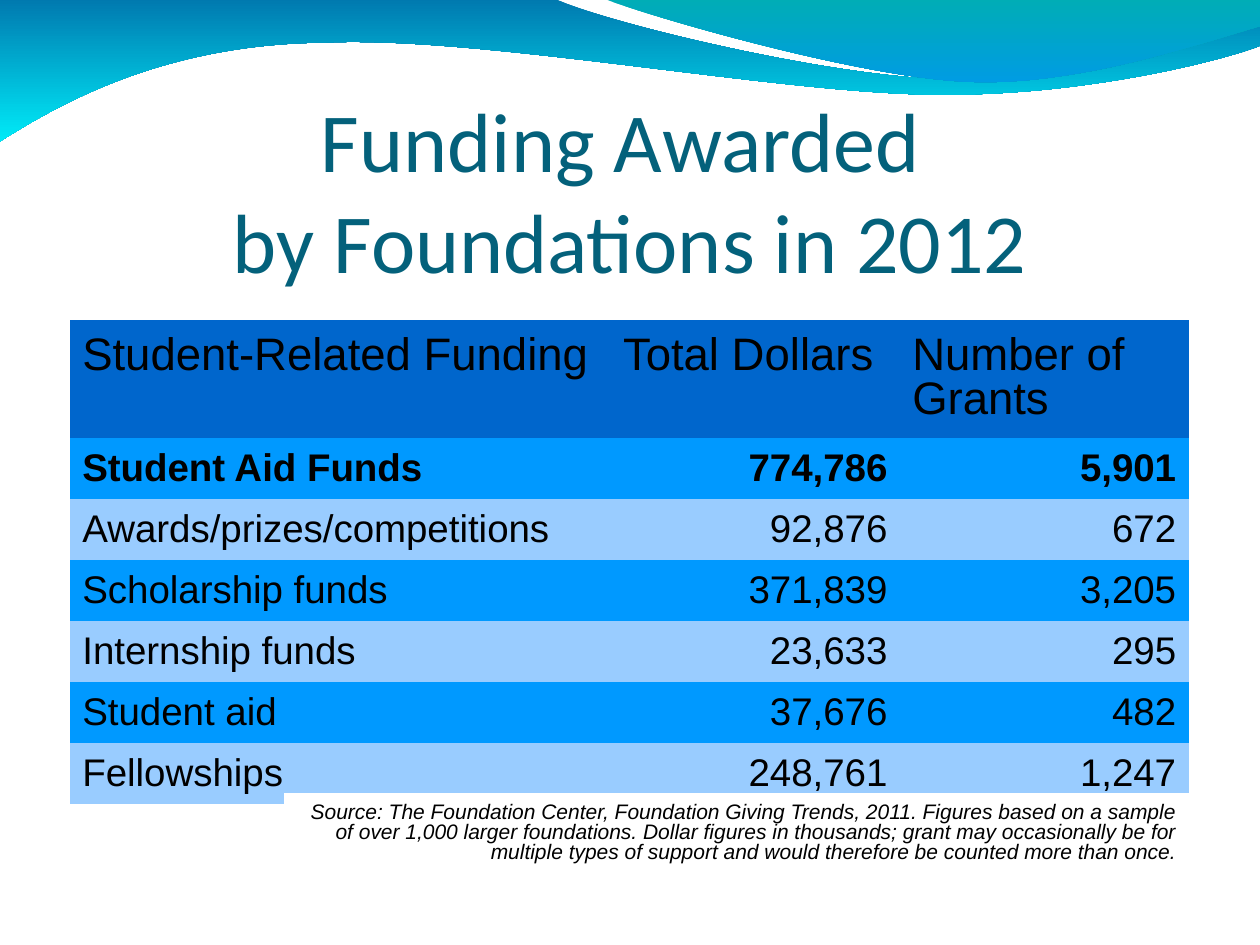
from pptx import Presentation
from pptx.dml.color import RGBColor
from pptx.enum import text
from pptx.oxml import ns, xmlchemy
from pptx.util import Cm, Pt

LEFT, RIGHT = text.PP_ALIGN.LEFT, text.PP_ALIGN.RIGHT
NO_STYLE = "{2D5ABB26-0587-4C30-8999-92F81FD0307C}"

BACK_WAVE = [
    [(0, -0.03)],
    [(11.18, -0.03)],
    [(12.09, 0.43), (16.87, 1.6), (19.25, 1.6)],
    [(21.67, 1.6), (24.33, 0.66), (25.4, 0.23)],
    [(25.43, 0.91)],
    [(24.97, 1.12), (22.1, 1.93), (18.95, 1.91)],
    [(15.8, 1.91), (9.7, 0.71), (6.53, 0.86)],
    [(3.28, 0.89), (1.17, 2.11), (-0.03, 2.87)],
    [(0, -0.03)],
]
FRONT_WAVE = [
    [(12.17, -0.03)],
    [(12.93, 0.28), (17.32, 1.57), (19.53, 1.65)],
    [(21.74, 1.75), (24.41, 0.81), (25.4, 0.53)],
    [(25.4, 0)],
    [(12.17, -0.03)],
]
FUNDING = [
    ("Student-Related Funding", "Total Dollars", "Number of Grants"),
    ("Student Aid Funds", "774,786", "5,901"),
    ("Awards/prizes/competitions", "92,876", "672"),
    ("Scholarship funds", "371,839", "3,205"),
    ("Internship funds", "23,633", "295"),
    ("Student aid", "37,676", "482"),
    ("Fellowships", "248,761", "1,247"),
]
SOURCE = (
    "Source: The Foundation Center, Foundation Giving Trends, 2011. "
    "Figures based on a sample of over 1,000 larger foundations. "
    "Dollar figures in thousands; grant may occasionally be for multiple "
    "types of support and would therefore be counted more than once."
)


def color(value):
    return RGBColor.from_string(value)


def set_attrs(obj, values):
    for name, value in values.items():
        setattr(obj, name, value)


def write(p, content, hex_color, para, font):
    p.text = content
    set_attrs(p, para)
    for r in p.runs:
        set_attrs(r.font, font)
        r.font.color.rgb = color(hex_color)


def bend(sp, segments):
    lines = iter(list(sp.element.iter(ns.qn("a:lnTo"))))
    for segment in segments[1:]:
        parts = [next(lines) for _ in segment]
        if len(parts) == 3:
            curve = xmlchemy.OxmlElement("a:cubicBezTo")
            parts[0].addprevious(curve)
            for part in parts:
                curve.append(part[0])
                part.getparent().remove(part)


def add_wave(s, segments, stops):
    points = [(Cm(x), Cm(y)) for segment in segments for x, y in segment]
    builder = s.shapes.build_freeform(*points[0])
    builder.add_line_segments(points[1:], close=True)
    sp = builder.convert_to_shape()
    bend(sp, segments)
    sp.shadow.inherit = False
    sp.line.fill.background()
    sp.fill.gradient()
    sp.fill.gradient_angle = 270
    for position, (stop, value) in enumerate(zip(sp.fill.gradient_stops, stops)):
        stop.position = position
        stop.color.rgb = color(value)
    master = s.slide_layout.slide_master
    master.placeholders[0].element.addprevious(sp.element)


def format_title(s, content):
    sp = s.shapes.title
    set_attrs(sp, {"left": Cm(1.27), "top": Cm(1.48), "width": Cm(22.86), "height": Cm(4.37)})
    tf = sp.text_frame
    set_attrs(tf, {
        "auto_size": text.MSO_AUTO_SIZE.NONE, "word_wrap": True,
        "vertical_anchor": text.MSO_ANCHOR.BOTTOM,
        "margin_left": 0, "margin_right": 0, "margin_top": Cm(0.13), "margin_bottom": 0,
    })
    write(tf.paragraphs[0], content, "04617B", {"alignment": text.PP_ALIGN.CENTER},
          {"name": "Calibri", "size": Pt(48)})


def add_table(s, left, top, widths, heights):
    frame = s.shapes.add_table(len(heights), len(widths), Cm(left), Cm(top),
                               Cm(sum(widths)), Cm(sum(heights)))
    table = frame.table
    set_attrs(table, {"first_row": False, "horz_banding": False})
    for style in frame.element.iter(ns.qn("a:tableStyleId")):
        style.text = NO_STYLE
    for column, width in zip(table.columns, widths):
        column.width = Cm(width)
    for row, height in zip(table.rows, heights):
        row.height = Cm(height)
    return table


def fill_cell(cell, content, fill, margin_top, align, font):
    cell.fill.solid()
    cell.fill.fore_color.rgb = color(fill)
    set_attrs(cell, {"margin_left": Cm(0.25), "margin_right": Cm(0.25),
                     "margin_top": Cm(margin_top), "margin_bottom": Cm(0.13)})
    write(cell.text_frame.paragraphs[0], content, "000000",
          {"alignment": align, "line_spacing": 0.87}, {"name": "Arial", **font})


def add_funding_table(s):
    table = add_table(s, 1.41, 6.45, [10.9, 5.83, 5.82], [2.37] + [1.23] * 6)
    for i, row in enumerate(FUNDING):
        header = i == 0
        fill = "0066CC" if header else ("99CCFF", "0099FF")[i % 2]
        font = {"size": Pt(26 if header else 22), "bold": i == 1}
        for j, content in enumerate(row):
            align = LEFT if header or j == 0 else RIGHT
            fill_cell(table.cell(i, j), content, fill, 0.31 if header else 0.28, align, font)


def add_source_note(s):
    table = add_table(s, 5.72, 15.98, [18.26], [1.7])
    fill_cell(table.cell(0, 0), SOURCE, "FFFFFF", 0.2, RIGHT,
              {"size": Pt(12), "italic": True})


def main():
    prs = Presentation()
    set_attrs(prs, {"slide_width": Cm(25.4), "slide_height": Cm(19.05)})
    s = prs.slides.add_slide(prs.slide_layouts[5])
    add_wave(s, BACK_WAVE, ("0079AF", "00EBF8"))
    add_wave(s, FRONT_WAVE, ("00ADB6", "009BE5"))
    format_title(s, "Funding Awarded \vby Foundations in 2012")
    add_funding_table(s)
    add_source_note(s)
    prs.save("out.pptx")


if __name__ == "__main__":
    main()
